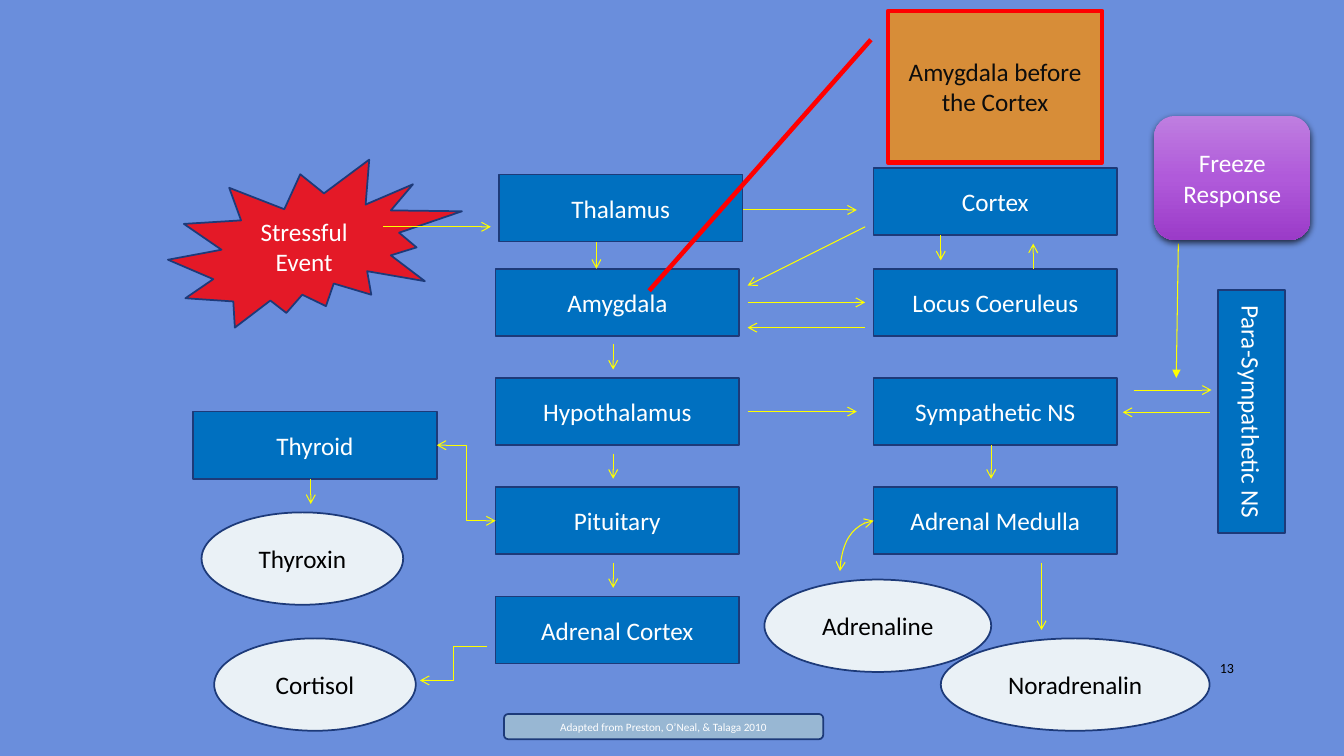
from copy import deepcopy
from dataclasses import dataclass

from lxml import etree
from pptx import Presentation
from pptx.dml.color import RGBColor
from pptx.enum.shapes import MSO_CONNECTOR as LINK, MSO_SHAPE as SHAPE
from pptx.enum.text import MSO_ANCHOR as ANCHOR, PP_ALIGN as ALIGN
from pptx.oxml.ns import qn
from pptx.util import Pt


@dataclass(frozen=True)
class Theme:
    font: str = "Calibri"
    body: float = 18
    number: float = 10
    source: float = 8
    background: str = "6A8EDC"
    box: str = "0070C0"
    outline: str = "1D3A79"
    hormone: str = "EAF1F6"
    source_fill: str = "98B7D3"
    callout: str = "D78D38"
    callout_text: str = "0D0D0D"
    red: str = "FF0000"
    arrow: str = "FFFF00"
    white: str = "FFFFFF"
    black: str = "000000"
    freeze: tuple = ((0, "BF7EE0"), (50, "B05ADA"), (100, "9B3BC8"))
    outline_width: float = 1.25
    callout_width: float = 3.25
    arrow_width: float = 0.75


THEME = Theme()
BOX_SIZE = (174, 48)
HORMONE_HEIGHT = 66
CENTRE_X, RIGHT_X = 354, 624
AMYGDALA_Y, ROW_STEP = 192, 78


def rgb(value):
    return RGBColor.from_string(value)


def write(frame, text, size, color, align=ALIGN.CENTER):
    frame.word_wrap = True
    frame.vertical_anchor = ANCHOR.MIDDLE
    paragraph = frame.paragraphs[0]
    paragraph.text = text
    paragraph.alignment = align
    paragraph.font.name = THEME.font
    paragraph.font.size = Pt(size)
    paragraph.font.color.rgb = rgb(color)


def add_node(slide, kind, text, x, y, width, height, fill, color=THEME.white,
             size=THEME.body, outline=THEME.outline, weight=THEME.outline_width):
    node = slide.shapes.add_shape(kind, Pt(x), Pt(y), Pt(width), Pt(height))
    node.shadow.inherit = False
    node.fill.solid()
    node.fill.fore_color.rgb = rgb(fill)
    node.line.color.rgb = rgb(outline)
    node.line.width = Pt(weight)
    write(node.text_frame, text, size, color)
    return node


def add_box(slide, text, x, y):
    return add_node(slide, SHAPE.RECTANGLE, text, x, y, *BOX_SIZE, THEME.box)


def add_hormone(slide, text, x, y, width):
    add_node(slide, SHAPE.OVAL, text, x, y, width, HORMONE_HEIGHT,
             THEME.hormone, THEME.black)


def add_arrow(slide, x1, y1, x2, y2, kind=LINK.STRAIGHT, both=False, tip="arrow"):
    arrow = slide.shapes.add_connector(kind, Pt(x1), Pt(y1), Pt(x2), Pt(y2))
    arrow.line.color.rgb = rgb(THEME.arrow)
    arrow.line.width = Pt(THEME.arrow_width)
    properties = arrow._element.spPr
    line = properties.find(qn("a:ln"))
    for end in ("a:headEnd", "a:tailEnd") if both else ("a:tailEnd",):
        etree.SubElement(line, qn(end), type=tip)
    etree.SubElement(properties, qn("a:effectLst"))
    return arrow


def add_stressful_event(slide):
    burst = add_node(slide, SHAPE.EXPLOSION2, "Stressful Event",
                     120, 114, 210, 120, THEME.red)
    color = burst._element.spPr.find(qn("a:solidFill"))[0]
    etree.SubElement(color, qn("a:alpha"), val="82000")


def add_freeze_response(slide):
    freeze = add_node(slide, SHAPE.ROUNDED_RECTANGLE, "Freeze Response",
                      824.4, 82.8, 111.6, 88.6, THEME.box)
    freeze.line.fill.background()
    freeze.fill.gradient()
    freeze.fill.gradient_angle = 270
    properties = freeze._element.spPr
    stops = properties.find(qn("a:gradFill")).find(qn("a:gsLst"))
    stops.insert(1, deepcopy(stops[0]))
    for stop, element, (place, color) in zip(freeze.fill.gradient_stops, stops, THEME.freeze):
        stop.position = place / 100
        stop.color.rgb = rgb(color)
        for change in list(element[0]):
            element[0].remove(change)
    shadow = etree.SubElement(properties.find(qn("a:effectLst")), qn("a:outerShdw"),
                              blurRad=str(Pt(5)), dist=str(Pt(2)),
                              dir="5400000", rotWithShape="0")
    color = etree.SubElement(shadow, qn("a:srgbClr"), val=THEME.black)
    etree.SubElement(color, qn("a:alpha"), val="69000")


def add_callout(slide):
    callout = add_node(slide, SHAPE.LINE_CALLOUT_1, "Amygdala before the Cortex",
                       634.3, 7.9, 153, 108, THEME.callout, THEME.callout_text,
                       outline=THEME.red, weight=THEME.callout_width)
    for index, value in enumerate((0.19, -0.08, 1.85, -1.115)):
        callout.adjustments[index] = value


def add_slide_number(slide):
    number = slide.shapes.add_textbox(Pt(828), Pt(463), Pt(60.5), Pt(28.8))
    write(number.text_frame, "13", THEME.number, THEME.black, ALIGN.RIGHT)


def main():
    deck = Presentation()
    deck.slide_width, deck.slide_height = Pt(960), Pt(540)
    slide = deck.slides.add_slide(deck.slide_layouts[6])
    slide.background.fill.solid()
    slide.background.fill.fore_color.rgb = rgb(THEME.background)

    add_stressful_event(slide)
    add_arrow(slide, 438, 150, 612, 150)

    add_box(slide, "Cortex", RIGHT_X, 120)
    boxes = {}
    columns = (
        (RIGHT_X, ("Locus Coeruleus", "Sympathetic NS", "Adrenal Medulla")),
        (CENTRE_X, ("Amygdala", "Hypothalamus", "Pituitary", "Adrenal Cortex")),
    )
    for x, names in columns:
        for row, name in enumerate(names):
            boxes[name] = add_box(slide, name, x, AMYGDALA_Y + row * ROW_STEP)
    thyroid = add_box(slide, "Thyroid", 138, 294)

    for name, x, y, width in (
        ("Cortisol", 153, 456, 144),
        ("Thyroxin", 144, 366, 144),
        ("Noradrenalin", 672, 456, 192),
        ("Adrenaline", 546, 414, 162),
    ):
        add_hormone(slide, name, x, y, width)

    for row in range(3):
        y = AMYGDALA_Y + row * ROW_STEP + 54
        add_arrow(slide, 438, y, 438, y + 18)
    for ends in (
        (426, 168, 426, 192),
        (222, 342, 222, 360),
        (618, 162, 534, 204),
        (672, 168, 672, 186),
        (738, 192, 738, 174),
        (534, 216, 618, 216),
        (618, 234, 534, 234),
        (534, 294, 612, 294),
        (708, 318, 708, 342),
        (744, 402, 744, 450),
        (273.6, 162, 350.6, 162),
        (810, 278.6, 865.4, 278.6),
        (864, 294.5, 802, 294.5),
    ):
        add_arrow(slide, *ends)
    add_arrow(slide, 841.7, 174, 840.2, 270, tip="triangle")

    add_arrow(slide, 348, 462, 300, 486, LINK.ELBOW)
    thyroid_link = add_arrow(slide, 312, 318, 354, 372, LINK.ELBOW, both=True)
    thyroid_link.begin_connect(thyroid, 3)
    thyroid_link.end_connect(boxes["Pituitary"], 1)
    adrenaline_link = add_arrow(slide, 624, 372, 600, 408, LINK.CURVE, both=True)
    adrenaline_link._element.spPr.find(qn("a:prstGeom")).set("prst", "curvedConnector2")
    adrenaline_link.begin_connect(boxes["Adrenal Medulla"], 1)

    add_node(slide, SHAPE.ROUNDED_RECTANGLE, "Adapted from Preston, O’Neal, & Talaga 2010",
             360, 510, 228, 18, THEME.source_fill, size=THEME.source)
    add_box(slide, "Thalamus", 356.4, 124.6)
    add_callout(slide)
    add_box(slide, "Para-Sympathetic NS", 807, 270).rotation = 90
    add_freeze_response(slide)
    add_slide_number(slide)
    deck.save("out.pptx")


if __name__ == "__main__":
    main()
